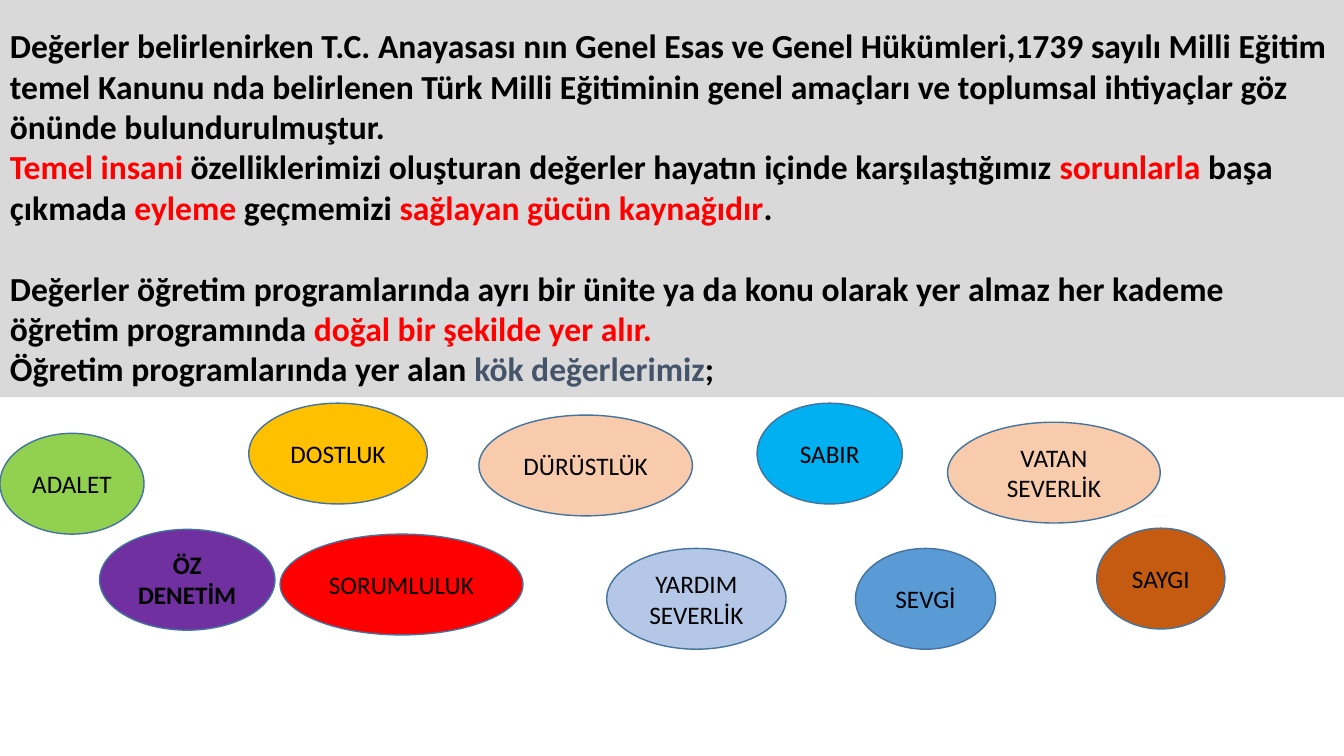
from typing import NamedTuple

from pptx import Presentation
from pptx.dml.color import RGBColor
from pptx.enum.shapes import MSO_SHAPE
from pptx.enum.text import MSO_ANCHOR, PP_ALIGN
from pptx.util import Cm, Pt

RECTANGLE, OVAL = MSO_SHAPE.RECTANGLE, MSO_SHAPE.OVAL
TOP, MIDDLE = MSO_ANCHOR.TOP, MSO_ANCHOR.MIDDLE
LEFT, CENTER = PP_ALIGN.LEFT, PP_ALIGN.CENTER

FONT = "Calibri"
BLACK, RED, SLATE = "000000", "FF0000", "44546A"
BAND_FILL, OVAL_LINE = "D9D9D9", "43739E"
SLIDE_WIDTH, SLIDE_HEIGHT = 33.87, 19.05
OVAL_HEIGHT = 2.54


class Phrase(NamedTuple):
    text: str
    color: str = BLACK


class Statement(NamedTuple):
    phrases: list[Phrase]
    space_before: float = 0


class RootValue(NamedTuple):
    lines: list[str]
    left: float
    top: float
    width: float
    fill: str
    bold: bool = False


STATEMENTS = [
    Statement([
        Phrase("Değerler belirlenirken T.C. Anayasası nın Genel Esas ve Genel "
               "Hükümleri,1739 sayılı Milli Eğitim temel Kanunu nda belirlenen "
               "Türk Milli Eğitiminin genel amaçları ve toplumsal ihtiyaçlar "
               "göz önünde bulundurulmuştur."),
    ]),
    Statement([
        Phrase("Temel insani ", RED),
        Phrase("özelliklerimizi oluşturan değerler hayatın içinde karşılaştığımız"),
        Phrase(" sorunlarla ", RED),
        Phrase("başa çıkmada "),
        Phrase("eyleme ", RED),
        Phrase("geçmemizi "),
        Phrase("sağlayan gücün kaynağıdır", RED),
        Phrase("."),
    ]),
    Statement([
        Phrase("Değerler öğretim programlarında ayrı bir ünite ya da konu olarak "
               "yer almaz her kademe öğretim programında "),
        Phrase("doğal bir şekilde yer alır.", RED),
    ], space_before=29),
    Statement([
        Phrase("Öğretim programlarında yer alan "),
        Phrase("kök değerlerimiz", SLATE),
        Phrase(";"),
    ]),
]

ROOT_VALUES = [
    RootValue(["ADALET"], 0, 10.92, 3.63, "92D050"),
    RootValue(["ÖZ DENETİM"], 2.51, 13.34, 4.42, "7030A0", bold=True),
    RootValue(["DOSTLUK"], 6.27, 10.16, 4.5, "FFC000"),
    RootValue(["SORUMLULUK"], 7.06, 13.46, 6.12, "FF0000"),
    RootValue(["DÜRÜSTLÜK"], 12.07, 10.46, 5.38, "F8CBAD"),
    RootValue(["YARDIM SEVERLİK"], 15.29, 13.82, 4.52, "B4C7E7"),
    RootValue(["SEVGİ"], 21.56, 13.82, 3.53, "5B9BD5"),
    RootValue(["SABIR"], 19.08, 10.16, 3.66, "00B0F0"),
    RootValue(["VATAN", "SEVERLİK"], 23.88, 10.64, 5.36, "F8CBAD"),
    RootValue(["SAYGI"], 27.64, 13.31, 3.23, "C55A11"),
]


def rgb(color: str) -> RGBColor:
    return RGBColor.from_string(color)


def add_filled_shape(slide, kind, left: float, top: float, width: float,
                     height: float, fill: str, anchor):
    shape = slide.shapes.add_shape(kind, Cm(left), Cm(top), Cm(width), Cm(height))
    shape.shadow.inherit = False
    shape.fill.solid()
    shape.fill.fore_color.rgb = rgb(fill)
    shape.text_frame.word_wrap = True
    shape.text_frame.vertical_anchor = anchor
    return shape


def write_statements(frame, statements: list[Statement], align, size: float,
                     bold: bool) -> None:
    for index, statement in enumerate(statements):
        paragraph = frame.add_paragraph() if index else frame.paragraphs[0]
        paragraph.alignment = align
        paragraph.space_before = Pt(statement.space_before)
        for phrase in statement.phrases:
            run = paragraph.add_run()
            run.text = phrase.text
            run.font.name = FONT
            run.font.size = Pt(size)
            run.font.bold = bold
            run.font.color.rgb = rgb(phrase.color)


def add_explanation(slide) -> None:
    band = add_filled_shape(slide, RECTANGLE, 0, -0.25, SLIDE_WIDTH, 10.26,
                            BAND_FILL, TOP)
    band.line.fill.background()
    band.text_frame.margin_top = Cm(0.89)
    write_statements(band.text_frame, STATEMENTS, LEFT, 24, True)


def add_root_value(slide, value: RootValue) -> None:
    oval = add_filled_shape(slide, OVAL, value.left, value.top, value.width,
                            OVAL_HEIGHT, value.fill, MIDDLE)
    oval.line.color.rgb = rgb(OVAL_LINE)
    oval.line.width = Pt(1)
    lines = [Statement([Phrase(line)]) for line in value.lines]
    write_statements(oval.text_frame, lines, CENTER, 18, value.bold)


def main() -> None:
    presentation = Presentation()
    presentation.slide_width = Cm(SLIDE_WIDTH)
    presentation.slide_height = Cm(SLIDE_HEIGHT)
    slide = presentation.slides.add_slide(presentation.slide_layouts[6])
    add_explanation(slide)
    for value in ROOT_VALUES:
        add_root_value(slide, value)
    presentation.save("out.pptx")


if __name__ == "__main__":
    main()
